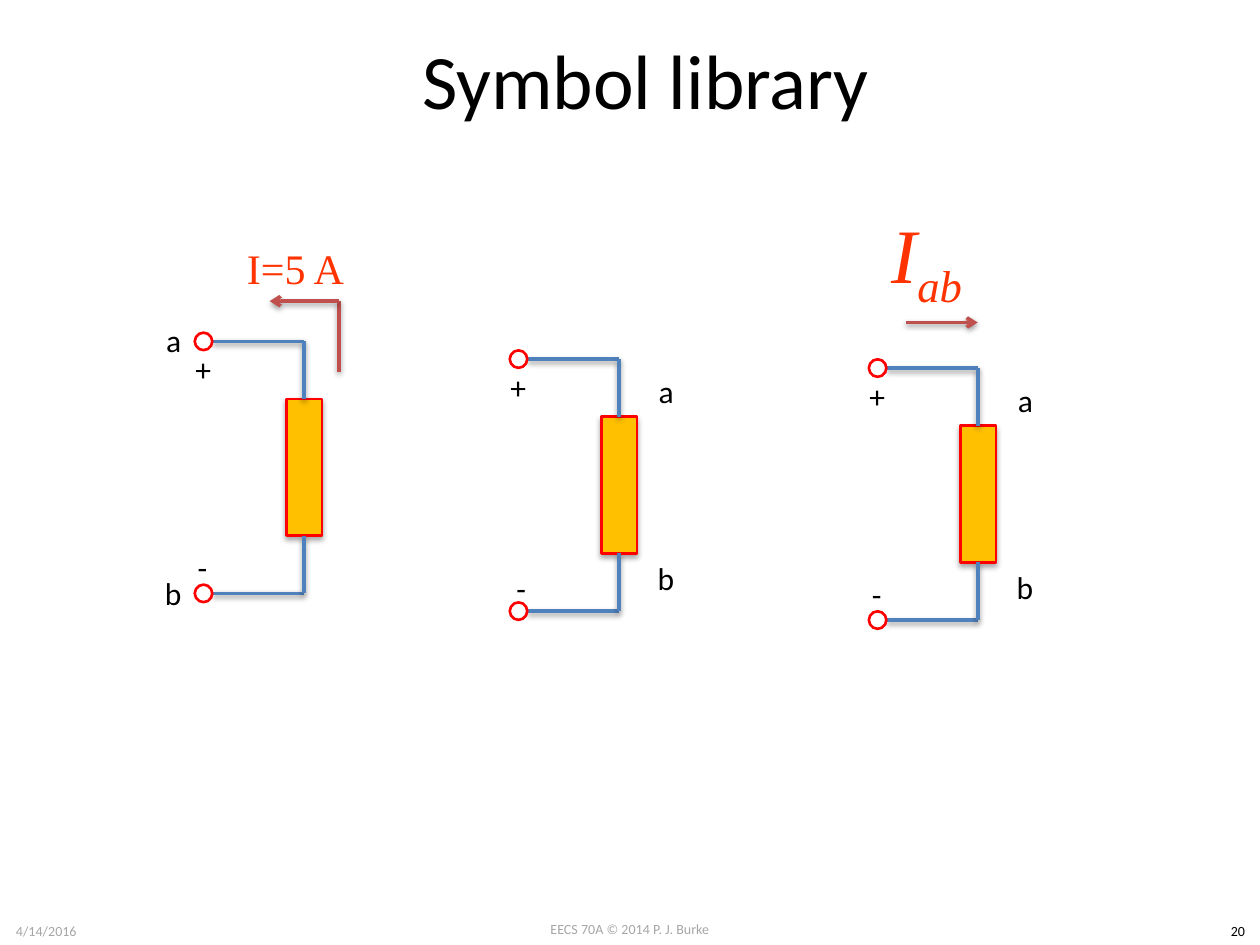
"""Build the circuit symbol library slide."""
from dataclasses import dataclass

from pptx import Presentation
from pptx.dml.color import RGBColor
from pptx.enum.shapes import MSO_CONNECTOR as Connector, MSO_SHAPE as Shape
from pptx.enum.text import MSO_ANCHOR as Anchor, PP_ALIGN as Align
from pptx.oxml import parse_xml
from pptx.oxml.ns import nsdecls, qn
from pptx.util import Pt


@dataclass(frozen=True)
class Theme:
    ink: str = "000000"
    muted: str = "A6A6A6"
    wire: str = "4F81BD"
    arrow: str = "C0504D"
    caption: str = "FF3300"
    resistor: str = "FFC000"
    outline: str = "FF0000"
    body_font: str = "Calibri"
    math_font: str = "Times New Roman"
    title_size: int = 44
    caption_size: int = 24
    label_size: int = 18
    footer_size: int = 8
    shadow: str = (
        f"<a:effectLst {nsdecls('a')}>"
        '<a:outerShdw blurRad="40000" dist="{dist}" dir="5400000" rotWithShape="0">'
        '<a:srgbClr val="000000"><a:alpha val="{alpha}"/></a:srgbClr>'
        "</a:outerShdw></a:effectLst>"
    )


theme = Theme()


def add_text(shapes, text, left, top, width, height, *, size=theme.label_size,
             color=theme.ink, font=theme.body_font, align=Align.CENTER,
             anchor=Anchor.TOP, wrap=True, italic=False, subscript=""):
    box = shapes.add_textbox(Pt(left), Pt(top), Pt(width), Pt(height))
    frame = box.text_frame
    frame.word_wrap = wrap
    frame.vertical_anchor = anchor
    para = frame.paragraphs[0]
    para.alignment = align
    for content in filter(None, (text, subscript)):
        span = para.add_run()
        span.text = content
        span.font.name = font
        span.font.size = Pt(size)
        span.font.italic = italic
        span.font.color.rgb = RGBColor.from_string(color)
    if subscript:
        span.font._element.set("baseline", "-25000")


def add_line(shapes, start, end, color, arrow=False):
    line = shapes.add_connector(Connector.STRAIGHT, *map(Pt, start + end))
    line.line.color.rgb = RGBColor.from_string(color)
    line.line.width = Pt(2)
    properties = line._element.spPr
    if arrow:
        head = parse_xml(f'<a:tailEnd {nsdecls("a")} type="arrow"/>')
        properties.find(qn("a:ln")).append(head)
    properties.append(parse_xml(theme.shadow.format(dist=20000, alpha=38000)))
    return line


deck = Presentation()
deck.slide_width, deck.slide_height = Pt(720), Pt(540)
page = deck.slides.add_slide(deck.slide_layouts[6])

add_text(page.shapes, "Symbol library", 45, 0, 648, 90,
         size=theme.title_size, anchor=Anchor.MIDDLE)
for text, left, top, width, color in (
    ("EECS 70A © 2014 P. J. Burke", 276, 522.7, 168, theme.muted),
    ("4/14/2016", 0, 523.4, 53, theme.muted),
    ("20", 694.8, 523.4, 25.2, theme.ink),
):
    add_text(page.shapes, text, left, top, width, 17,
             size=theme.footer_size, color=color)

radius = 5
drop = 144
resistor_x = 57.5
resistor_width, resistor_height = 20.5, 78
resistor_top = (drop - resistor_height) / 2

symbols = (
    dict(origin=(116.3, 195.1), a=(-28.4, -15.1), b=(-29.2, 129.6),
         minus=(-10.4, 114.5),
         arrows=(((193.7, 212.4), (193.7, 172.1), False),
                 ((193.7, 172.1), (154.1, 172.1), True)),
         caption=dict(text="I=5 A", left=126, top=126.7, width=85.7, height=52.6,
                      size=theme.caption_size)),
    dict(origin=(296.3, 205.2), a=(73, 3.6), b=(72.4, 110.9),
         minus=(-8.3, 116.6), arrows=(), caption=None),
    dict(origin=(501.5, 210.3), a=(73, 3.6), b=(72.4, 110.9),
         minus=(-10.4, 114.5),
         arrows=(((517.7, 184.3), (558.7, 184.3), True),),
         caption=dict(text="I", subscript="ab", italic=True, left=484.6, top=111.6,
                      width=90, height=72.7, size=theme.title_size)),
)

for symbol in symbols:
    shapes = page.shapes.add_group_shape().shapes
    x, y = symbol["origin"]
    corner_x = x + resistor_x

    resistor = shapes.add_shape(
        Shape.RECTANGLE, Pt(corner_x - resistor_width / 2), Pt(y + resistor_top),
        Pt(resistor_width), Pt(resistor_height))
    resistor.fill.solid()
    resistor.fill.fore_color.rgb = RGBColor.from_string(theme.resistor)
    resistor.line.color.rgb = RGBColor.from_string(theme.outline)
    resistor.line.width = Pt(1.5)
    resistor._element.spPr.append(
        parse_xml(theme.shadow.format(dist=23000, alpha=35000)))

    for wire_y, resistor_y, side in (
        (y, y + resistor_top, 0),
        (y + drop, y + drop - resistor_top, 2),
    ):
        add_line(shapes, (x + radius, wire_y), (corner_x, wire_y), theme.wire)
        lead = add_line(shapes, (corner_x, wire_y), (corner_x, resistor_y), theme.wire)
        lead.end_connect(resistor, side)
        terminal = shapes.add_shape(Shape.OVAL, Pt(x - radius), Pt(wire_y - radius),
                                    Pt(2 * radius), Pt(2 * radius))
        terminal.shadow.inherit = False
        terminal.fill.background()
        terminal.line.color.rgb = RGBColor.from_string(theme.outline)
        terminal.line.width = Pt(1.5)

    for text, (shift_x, shift_y), width in (
        ("a", symbol["a"], 23),
        ("b", symbol["b"], 24.5),
        ("+", (-11.8, 1.5), 24),
        ("-", symbol["minus"], 20),
    ):
        add_text(shapes, text, x + shift_x, y + shift_y, width, 29,
                 align=Align.LEFT, wrap=False)

    for start, end, has_head in symbol["arrows"]:
        add_line(shapes, start, end, theme.arrow, arrow=has_head)
    if symbol["caption"]:
        add_text(shapes, **symbol["caption"], color=theme.caption,
                 font=theme.math_font, anchor=Anchor.MIDDLE)

deck.save("out.pptx")
